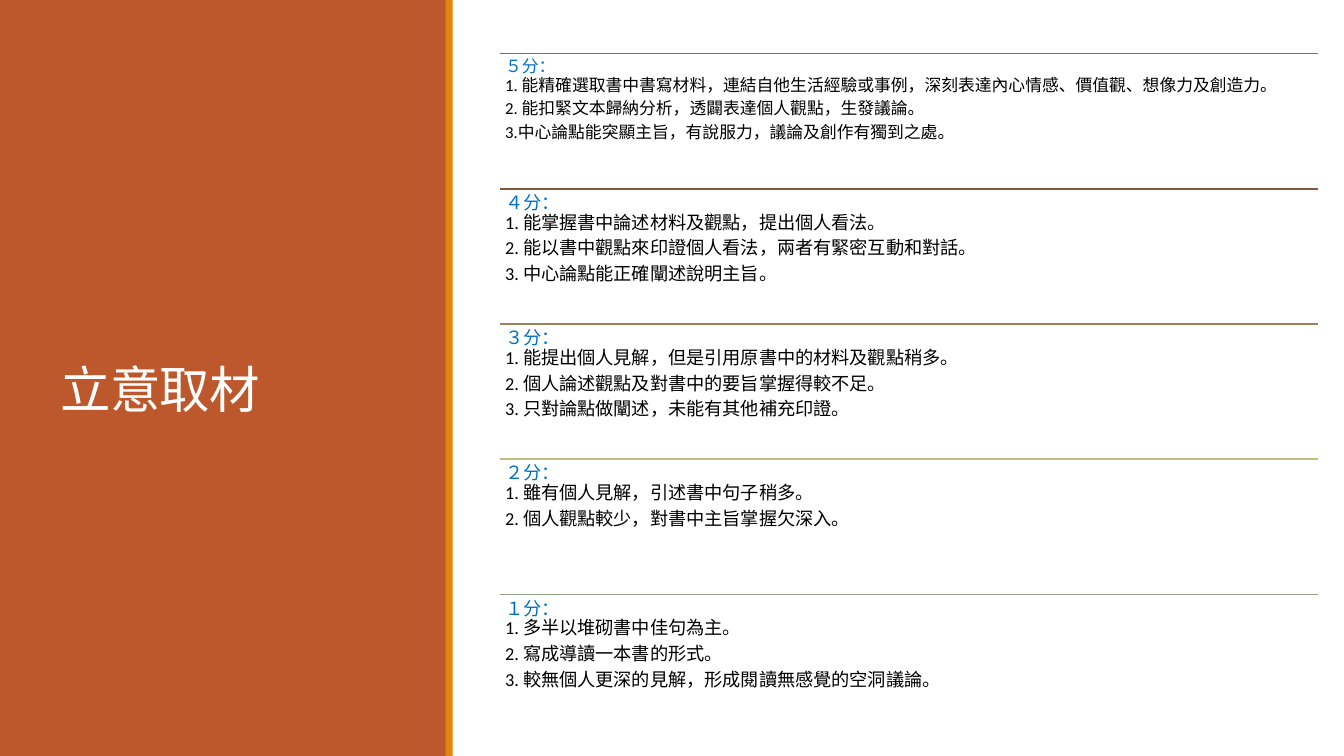
from lxml import etree
from pptx import Presentation
from pptx.dml.color import RGBColor
from pptx.enum.shapes import MSO_CONNECTOR, MSO_SHAPE
from pptx.enum.text import MSO_ANCHOR
from pptx.oxml.ns import qn
from pptx.util import Inches, Pt

RECT = MSO_SHAPE.RECTANGLE
LINE = MSO_CONNECTOR.STRAIGHT
MIDDLE = MSO_ANCHOR.MIDDLE
TOP = MSO_ANCHOR.TOP
RUST = RGBColor(0xBD, 0x58, 0x2C)
ORANGE = RGBColor(0xE4, 0x83, 0x12)
BROWN = RGBColor(0x86, 0x56, 0x40)
TAN = RGBColor(0x9B, 0x83, 0x57)
SAND = RGBColor(0xC2, 0xBC, 0x80)
SAGE = RGBColor(0x94, 0xA0, 0x88)
BLUE = RGBColor(0x00, 0x70, 0xC0)
BLACK = RGBColor(0, 0, 0)
WHITE = RGBColor(0xFF, 0xFF, 0xFF)
CJK = "Noto Sans CJK SC"
LATIN = "Calibri"

LEVELS = [
    (RUST, 12, "５分：", [
        "1. 能精確選取書中書寫材料，連結自他生活經驗或事例，深刻表達內心情感、價值觀、想像力及創造力。",
        "2. 能扣緊文本歸納分析，透闢表達個人觀點，生發議論。",
        "3.中心論點能突顯主旨，有說服力，議論及創作有獨到之處。"]),
    (BROWN, 13, "４分：", [
        "1. 能掌握書中論述材料及觀點，提出個人看法。",
        "2. 能以書中觀點來印證個人看法，兩者有緊密互動和對話。",
        "3. 中心論點能正確闡述說明主旨。"]),
    (TAN, 13, "３分：", [
        "1. 能提出個人見解，但是引用原書中的材料及觀點稍多。",
        "2. 個人論述觀點及對書中的要旨掌握得較不足。",
        "3. 只對論點做闡述，未能有其他補充印證。"]),
    (SAND, 13, "２分：", [
        "1. 雖有個人見解，引述書中句子稍多。",
        "2. 個人觀點較少，對書中主旨掌握欠深入。"]),
    (SAGE, 13, "１分：", [
        "1. 多半以堆砌書中佳句為主。",
        "2. 寫成導讀一本書的形式。",
        "3. 較無個人更深的見解，形成閱讀無感覺的空洞議論。"]),
]


def add_run(para, text, size, color, font):
    run = para.add_run()
    run.text = text
    run.font.size = Pt(size)
    run.font.name = font
    run.font.color.rgb = color
    if font == CJK:
        east = etree.SubElement(run.font._element, qn("a:ea"))
        east.set("typeface", font)
    return run


def add_bar(slide, left, top, width, height, color):
    bar = slide.shapes.add_shape(
        RECT, Inches(left), Inches(top), Inches(width), Inches(height))
    bar.shadow.inherit = False
    bar.fill.solid()
    bar.fill.fore_color.rgb = color
    bar.line.fill.background()


def add_text(slide, left, top, width, height, anchor, pad_x, pad_y):
    box = slide.shapes.add_textbox(
        Inches(left), Inches(top), Inches(width), Inches(height))
    frame = box.text_frame
    frame.word_wrap = True
    frame.vertical_anchor = anchor
    frame.margin_left = frame.margin_right = Inches(pad_x)
    frame.margin_top = frame.margin_bottom = Inches(pad_y)
    return frame


def add_panel(slide, left, top, width, height):
    add_bar(slide, left, top, width - 0.06, height, RUST)
    add_bar(slide, left + width - 0.07, top, 0.07, height, ORANGE)
    frame = add_text(slide, left + 0.5, top + 0.65, 3.5, 6.49,
                     MIDDLE, 0.1, 0.05)
    para = frame.paragraphs[0]
    para.line_spacing = 0.85
    run = add_run(para, "立意取材", 36, WHITE, CJK)
    run.font._element.set("spc", "-50")


def add_level(slide, left, top, width, height, level):
    color, size, head, points = level
    rule = slide.shapes.add_connector(
        LINE, Inches(left), Inches(top), Inches(left + width), Inches(top))
    rule.line.color.rgb = color
    rule.line.width = Pt(1.25)
    etree.SubElement(rule._element.spPr, qn("a:effectLst"))
    frame = add_text(slide, left, top, width, height, TOP, 0.05, 0.05)
    for i, point in enumerate(points):
        para = frame.paragraphs[0] if i == 0 else frame.add_paragraph()
        para.line_spacing = 0.9
        para.space_after = Pt(round(size * 0.33, 1))
        if i == 0:
            add_run(para, head, size, BLUE, CJK)
            para.add_line_break()
        add_run(para, point, size, BLACK, LATIN)


def add_scale(slide, left, top, width, height):
    step = height / len(LEVELS)
    for i, level in enumerate(LEVELS):
        add_level(slide, left, top + i * step, width, step, level)


def main():
    deck = Presentation()
    deck.slide_width = Inches(13.33)
    deck.slide_height = Inches(7.5)
    slide = deck.slides.add_slide(deck.slide_layouts[6])
    add_panel(slide, 0, 0, 4.49, 7.5)
    add_scale(slide, 4.96, 0.53, 8.11, 6.71)
    deck.save("out.pptx")


if __name__ == "__main__":
    main()
